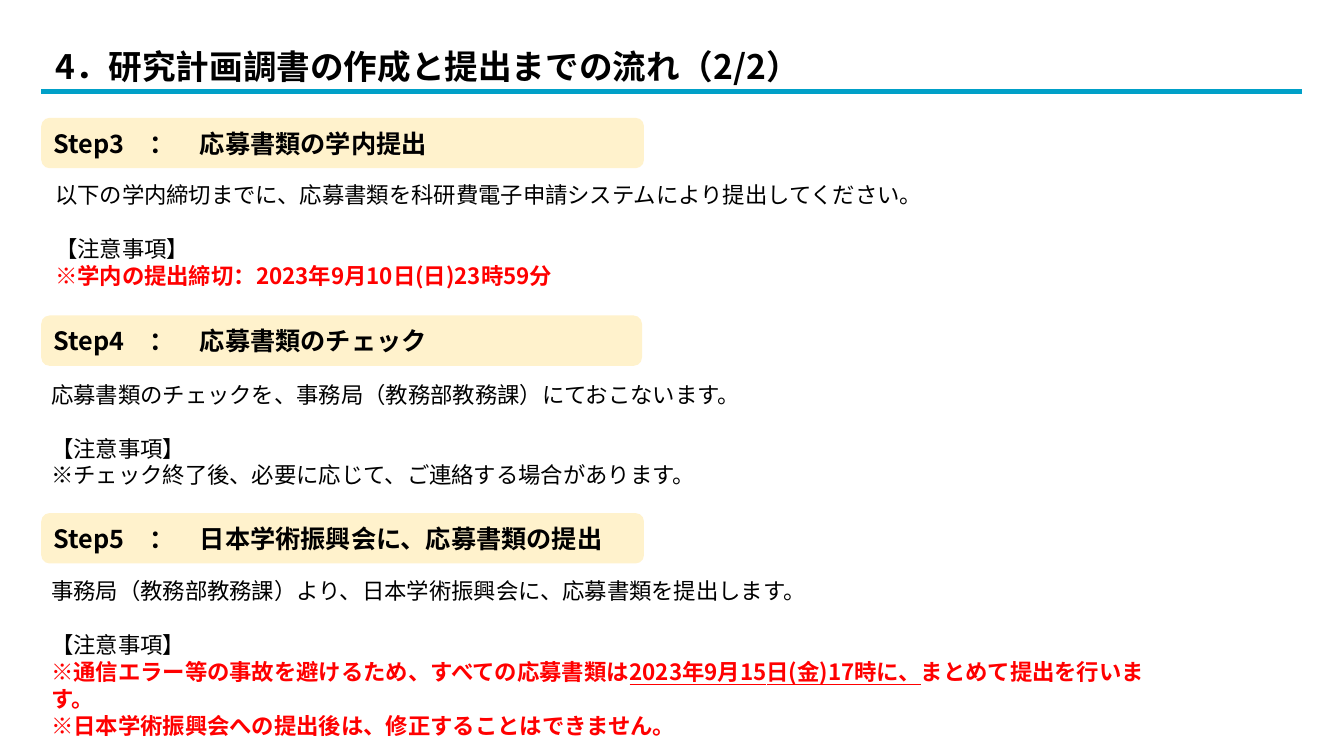
import pptx
import pptx.dml.color
import pptx.enum.shapes
import pptx.enum.text
import pptx.oxml
import pptx.oxml.ns
import pptx.util
from pptx.util import Cm

BLACK = pptx.dml.color.RGBColor(0x00, 0x00, 0x00)
RED = pptx.dml.color.RGBColor(0xFF, 0x00, 0x00)
CREAM = pptx.dml.color.RGBColor(0xFF, 0xF2, 0xCC)
TEAL = pptx.dml.color.RGBColor(0x00, 0xA0, 0xC8)

LEFT = 1.04
FIRST_STEP_TOP = 2.97
STEP_PITCH = 4.98
NOTICE = "【注意事項】"

# heading, heading width, text left, text top, text width, text height, introduction, notes
# A note is (colour, bold, [(words, underlined), ...])
STEPS = [
    ("Step3　：　応募書類の学内提出", 15.19, 1.14, 4.45, 28.45, 3.0,
     "以下の学内締切までに、応募書類を科研費電子申請システムにより提出してください。",
     [(RED, True, [("※学内の提出締切：2023年9月10日(日)23時59分", False)])]),
    ("Step4　：　応募書類のチェック", 15.14, LEFT, 9.47, 28.22, 3.0,
     "応募書類のチェックを、事務局（教務部教務課）にておこないます。",
     [(BLACK, False, [("※チェック終了後、必要に応じて、ご連絡する場合があります。", False)])]),
    ("Step5　：　日本学術振興会に、応募書類の提出", 15.19, LEFT, 14.43, 28.22, 3.76,
     "事務局（教務部教務課）より、日本学術振興会に、応募書類を提出します。",
     [(RED, True, [("※通信エラー等の事故を避けるため、すべての応募書類は", False),
                   ("2023年9月15日(金)17時に、", True),
                   ("まとめて提出を行います。", False)]),
      (RED, True, [("※日本学術振興会への提出後は、修正することはできません。", False)])]),
]


class FlowSlide:
    """The current slide with its typeface and text sizes."""

    typeface = "Noto Sans CJK JP"
    title_size, heading_size, body_size = 24, 18, 16
    notice_gap = 19.4

    def __init__(self, presentation):
        self.slide = presentation.slides.add_slide(presentation.slide_layouts[5])

    def style(self, paragraph, size, bold=False, color=BLACK):
        paragraph.alignment = pptx.enum.text.PP_ALIGN.LEFT
        font = paragraph.font
        font.size = pptx.util.Pt(size)
        font.bold = bold
        font.color.rgb = color
        font.name = self.typeface
        properties = paragraph._p.pPr.find(pptx.oxml.ns.qn("a:defRPr"))
        east_asian = pptx.oxml.parse_xml(
            f'<a:ea {pptx.oxml.ns.nsdecls("a")} typeface="{self.typeface}"/>')
        properties.find(pptx.oxml.ns.qn("a:latin")).addnext(east_asian)

    def title(self, words, left, top, width, height):
        title = self.slide.shapes.title
        title.left, title.top, title.width, title.height = map(Cm, (left, top, width, height))
        frame = title.text_frame
        frame.text = words
        frame.word_wrap = True
        frame.auto_size = pptx.enum.text.MSO_AUTO_SIZE.NONE
        frame.vertical_anchor = pptx.enum.text.MSO_ANCHOR.TOP
        self.style(frame.paragraphs[0], self.title_size, bold=True)

    def rule(self, left, right, y):
        rule = self.slide.shapes.add_connector(
            pptx.enum.shapes.MSO_CONNECTOR.STRAIGHT, Cm(left), Cm(y), Cm(right), Cm(y))
        rule.line.color.rgb = TEAL
        rule.line.width = pptx.util.Pt(3.5)
        rule._element.spPr.append(
            pptx.oxml.parse_xml(f'<a:effectLst {pptx.oxml.ns.nsdecls("a")}/>'))

    def heading(self, words, left, top, width, height):
        heading = self.slide.shapes.add_shape(
            pptx.enum.shapes.MSO_SHAPE.ROUNDED_RECTANGLE,
            Cm(left), Cm(top), Cm(width), Cm(height))
        heading.shadow.inherit = False
        heading.fill.solid()
        heading.fill.fore_color.rgb = CREAM
        heading.line.fill.background()
        frame = heading.text_frame
        frame.text = words
        frame.vertical_anchor = pptx.enum.text.MSO_ANCHOR.MIDDLE
        self.style(frame.paragraphs[0], self.heading_size, bold=True)

    def explanation(self, introduction, notes, left, top, width, height):
        frame = self.slide.shapes.add_textbox(
            Cm(left), Cm(top), Cm(width), Cm(height)).text_frame
        frame.word_wrap = True
        frame.text = introduction
        self.style(frame.paragraphs[0], self.body_size)
        notice = frame.add_paragraph()
        notice.text = NOTICE
        notice.space_before = pptx.util.Pt(self.notice_gap)
        self.style(notice, self.body_size)
        for color, bold, parts in notes:
            note = frame.add_paragraph()
            self.style(note, self.body_size, bold, color)
            for words, underlined in parts:
                run = note.add_run()
                run.text = words
                if underlined:
                    run.font.underline = True


def main():
    presentation = pptx.Presentation()
    presentation.slide_width, presentation.slide_height = Cm(33.87), Cm(19.05)
    flow = FlowSlide(presentation)
    flow.title("4．研究計画調書の作成と提出までの流れ（2/2）", 1.14, 1.02, 23.11, 1.27)
    flow.rule(LEFT, 32.82, 2.31)
    for index, step in enumerate(STEPS):
        heading, heading_width, left, top, width, height, introduction, notes = step
        flow.heading(heading, LEFT, FIRST_STEP_TOP + index * STEP_PITCH, heading_width, 1.27)
        flow.explanation(introduction, notes, left, top, width, height)
    presentation.save("out.pptx")


if __name__ == "__main__":
    main()
